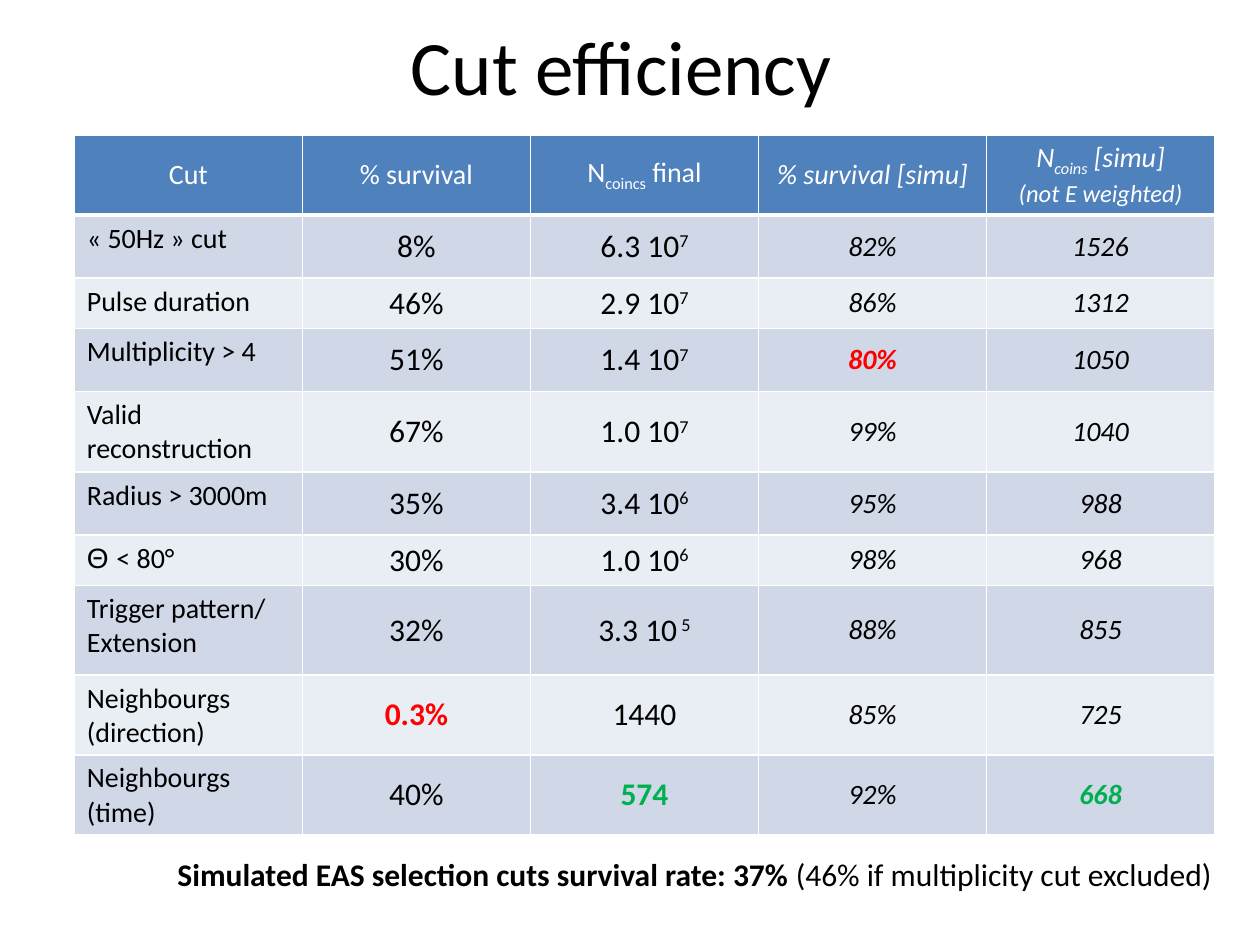
from lxml import etree
from pptx import Presentation
from pptx.dml.color import RGBColor
from pptx.enum.text import MSO_ANCHOR, MSO_AUTO_SIZE, PP_ALIGN
from pptx.oxml.ns import qn
from pptx.util import Inches, Pt

LEFT, CENTER = PP_ALIGN.LEFT, PP_ALIGN.CENTER
TOP, MIDDLE = MSO_ANCHOR.TOP, MSO_ANCHOR.MIDDLE
GROW = MSO_AUTO_SIZE.SHAPE_TO_FIT_TEXT
BLANK = 6
BLACK, WHITE, RED, GREEN = "000000", "FFFFFF", "FF0000", "00B050"
HEADER_FILL, BAND_FILLS = "4F81BD", ("D0D8E8", "E9EDF4")
SUB, SUPER = -25000, 30000

COLUMN_WIDTH = 1.81
ROW_HEIGHTS = (0.5, 0.5, 0.29, 0.5, 0.64, 0.5, 0.29, 0.71, 0.5, 0.5)
HEADERS = (
    [[("Cut", {})]],
    [[("% survival", {})]],
    [[("N", {}), ("coincs", {"base": SUB}), (" final", {})]],
    [[("% survival [simu]", {})]],
    [[("N", {}), ("coins", {"base": SUB}), (" [simu]", {})],
     [("(not E weighted)", {"size": 14})]],
)
CUTS = (
    (["« 50Hz » cut"], "8%", ("6.3 10", "7"), "82%", "1526"),
    (["Pulse duration"], "46%", ("2.9 10", "7"), "86%", "1312"),
    (["Multiplicity > 4"], "51%", ("1.4 10", "7"), "80%", "1050"),
    (["Valid reconstruction"], "67%", ("1.0 10", "7"), "99%", "1040"),
    (["Radius > 3000m"], "35%", ("3.4 10", "6"), "95%", "988"),
    (["Θ < 80°"], "30%", ("1.0 10", "6"), "98%", "968"),
    (["Trigger pattern/ Extension"], "32%", ("3.3 10", " 5"), "88%", "855"),
    (["Neighbourgs", "(direction)"], "0.3%", ("1440",), "85%", "725"),
    (["Neighbourgs", "(time)"], "40%", ("574",), "92%", "668"),
)
HIGHLIGHTS = {"80%": RED, "0.3%": RED, "574": GREEN, "668": GREEN}


def color(hex_code):
    """Turn a hex string into a colour."""
    return RGBColor.from_string(hex_code)


def add_span(para, text, size=16, ink=BLACK, bold=False, italic=False,
             base=0, font="Calibri"):
    """Add one formatted run to a paragraph."""
    span = para.add_run()
    span.text = text
    span.font.name = font
    span.font.size = Pt(size)
    span.font.bold = bold
    span.font.italic = italic
    span.font.color.rgb = color(ink)
    if base:
        span._r.get_or_add_rPr().set("baseline", str(base))


def write(frame, paragraphs, align=LEFT, **style):
    """Fill a text frame with paragraphs of (text, style) spans."""
    for index, spans in enumerate(paragraphs):
        para = frame.add_paragraph() if index else frame.paragraphs[0]
        para.alignment = align
        for text, changes in spans:
            add_span(para, text, **{**style, **changes})


def add_text(page, area, paragraphs, wrap=True, anchor=TOP, **style):
    """Add a text box and return its frame."""
    box = page.shapes.add_textbox(*map(Inches, area))
    frame = box.text_frame
    frame.word_wrap = wrap
    frame.vertical_anchor = anchor
    write(frame, paragraphs, **style)
    return frame


def set_borders(cell, bottom):
    """Draw white cell borders, with the bottom one in the given points."""
    properties = cell._tc.get_or_add_tcPr()
    for side, width in (("L", 1), ("R", 1), ("T", 1), ("B", bottom)):
        line = etree.SubElement(properties, qn(f"a:ln{side}"), w=str(Pt(width)))
        fill = etree.SubElement(line, qn("a:solidFill"))
        etree.SubElement(fill, qn("a:srgbClr"), val=WHITE)


def fill_cell(cell, paragraphs, fill, bottom=1, anchor=MIDDLE, **style):
    """Format a table cell and write its text."""
    set_borders(cell, bottom)
    cell.fill.solid()
    cell.fill.fore_color.rgb = color(fill)
    cell.vertical_anchor = anchor
    write(cell.text_frame, paragraphs, **style)


def label_spans(line):
    """Split a cut's label so that the Greek letter gets its own font."""
    if line.startswith("Θ "):
        return [("Θ ", {"font": "Arial"}), (line[2:], {})]
    return [(line, {})]


def value_spans(parts):
    """Make spans of a number and its exponent, highlighted if notable."""
    number, *exponent = parts
    ink = HIGHLIGHTS.get(number)
    emphasis = {"ink": ink, "bold": True} if ink else {}
    return [(number, emphasis)] + [(text, {"base": SUPER}) for text in exponent]


def add_cut_table(page):
    """Add the table of survival rates after each cut."""
    columns = len(HEADERS)
    table = page.shapes.add_table(
        len(ROW_HEIGHTS), columns, Inches(0.59), Inches(1.07),
        Inches(COLUMN_WIDTH * columns), Inches(sum(ROW_HEIGHTS))).table
    for column in table.columns:
        column.width = Inches(COLUMN_WIDTH)
    for row, height in zip(table.rows, ROW_HEIGHTS):
        row.height = Inches(height)
    for index, header in enumerate(HEADERS):
        fill_cell(table.cell(0, index), header, HEADER_FILL, bottom=3,
                  align=CENTER, ink=WHITE, italic=index >= 3)
    for row, (label, survival, count, simu, simu_count) in enumerate(CUTS, 1):
        fill = BAND_FILLS[(row - 1) % 2]
        fill_cell(table.cell(row, 0), [label_spans(line) for line in label],
                  fill, anchor=TOP)
        values = ((survival,), count, (simu,), (simu_count,))
        for index, parts in enumerate(values, 1):
            simulated = index >= 3
            fill_cell(table.cell(row, index), [value_spans(parts)], fill,
                      align=CENTER, size=16 if simulated else 18,
                      italic=simulated)


def main():
    """Build the slide and save it."""
    deck = Presentation()
    deck.slide_width, deck.slide_height = Inches(10), Inches(7.5)
    page = deck.slides.add_slide(deck.slide_layouts[BLANK])
    add_text(page, (0, -0.11, 10, 1.25), [[("Cut efficiency ", {})]],
             anchor=MIDDLE, align=CENTER, size=44)
    add_cut_table(page)
    summary = [("Simulated EAS selection cuts survival rate: 37%", {"bold": True}),
               (" (46% if multiplicity cut excluded)", {})]
    frame = add_text(page, (1.31, 6.74, 8.49, 0.4), [summary], wrap=False, size=18)
    frame.auto_size = GROW
    deck.save("out.pptx")


if __name__ == "__main__":
    main()
